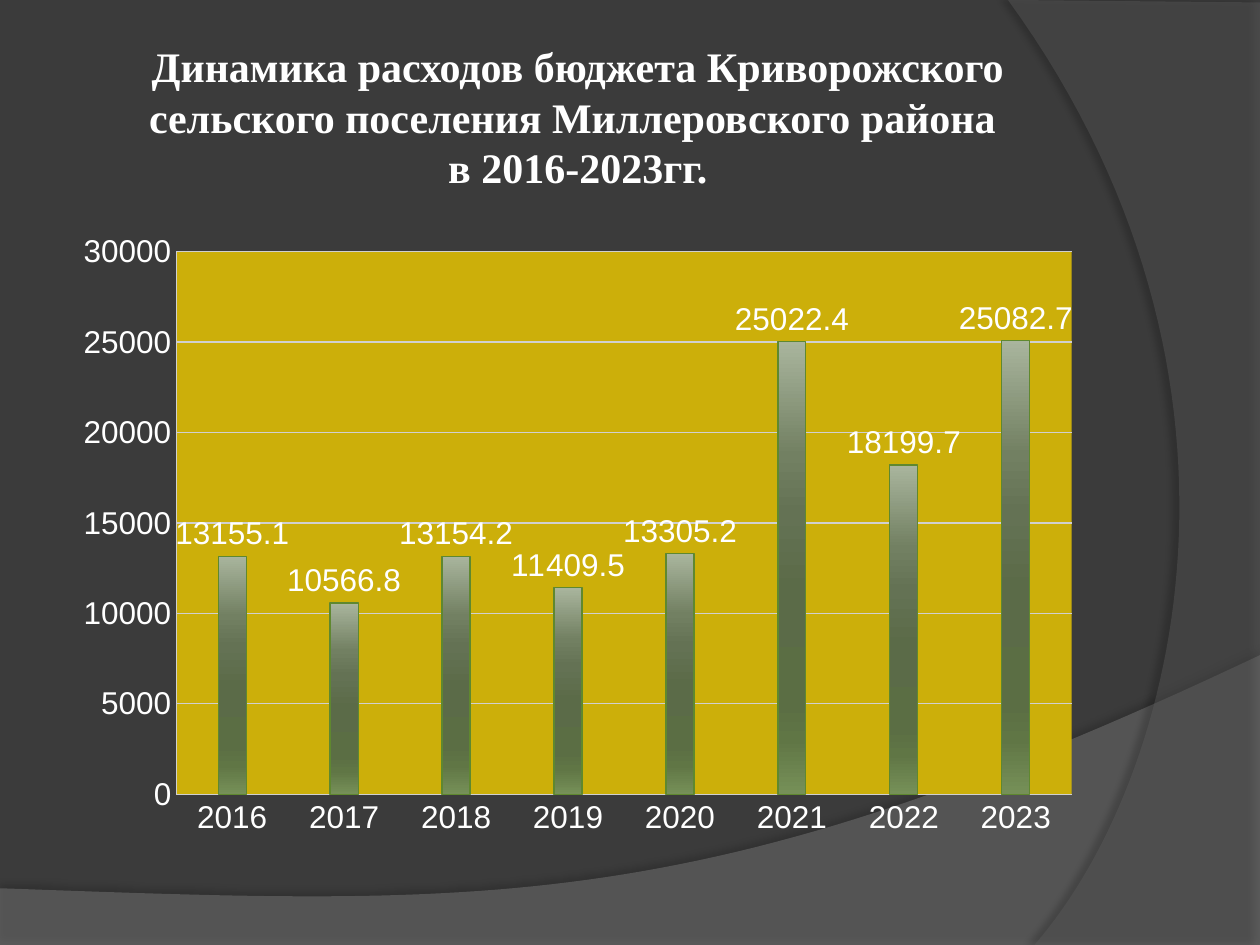
from lxml import etree
from pptx import Presentation
from pptx.chart.data import CategoryChartData
from pptx.dml.color import RGBColor
from pptx.enum.chart import XL_CHART_TYPE, XL_LABEL_POSITION, XL_TICK_MARK
from pptx.enum.text import MSO_ANCHOR, PP_ALIGN
from pptx.oxml import parse_xml
from pptx.oxml.ns import nsdecls, qn
from pptx.util import Inches, Pt

COLUMN = XL_CHART_TYPE.COLUMN_CLUSTERED
OUTSIDE_END = XL_LABEL_POSITION.OUTSIDE_END
NO_TICK = XL_TICK_MARK.NONE
MIDDLE = MSO_ANCHOR.MIDDLE
CENTER = PP_ALIGN.CENTER

COLORS = {"bg": "3B3B3B", "wave": "7F7F7F", "arc": "5E5E5E", "shadow": "000000",
          "text": "FFFFFF", "plot": "CCAF0A", "bar_line": "5F882F", "grid": "D0D0D0"}
BAR_STOPS = [(0, "A9B59D"), (25, "728062"), (38, "647254"), (55, "5B6B48"),
             (80, "5B6E44"), (88, "607645"), (100, "769058")]
TITLE = ("Динамика расходов бюджета Криворожского сельского поселения "
         "Миллеровского района \vв 2016-2023гг.")
EXPENSES = {"2016": 13155.1, "2017": 10566.8, "2018": 13154.2, "2019": 11409.5,
            "2020": 13305.2, "2021": 25022.4, "2022": 18199.7, "2023": 25082.7}


def rgb(name):
    return RGBColor.from_string(COLORS[name])


def set_attrs(obj, values):
    for name, value in values.items():
        setattr(obj, name, value)


def bezier(p0, p1, p2, p3, steps=60):
    """Points of a cubic curve, both ends included."""
    points = []
    for i in range(steps + 1):
        t = i / steps
        u = 1 - t
        points.append(tuple(u**3 * a + 3 * u * u * t * b + 3 * u * t * t * c + t**3 * d
                            for a, b, c, d in zip(p0, p1, p2, p3)))
    return points


def add_swoosh(s, points, color, alpha, shadow):
    """Translucent outline; shadow is (alpha %, blur pt, distance pt, degrees)."""
    start, *rest = [(Inches(x), Inches(y)) for x, y in points]
    builder = s.shapes.build_freeform(*start)
    builder.add_line_segments(rest, close=True)
    sp = builder.convert_to_shape()
    sp.fill.solid()
    sp.fill.fore_color.rgb = rgb(color)
    sp.line.fill.background()
    sp.shadow.inherit = False
    sp_pr = sp._element.spPr
    fill_color = sp_pr.find(qn("a:solidFill"))[0]
    etree.SubElement(fill_color, qn("a:alpha"), val=str(alpha * 1000))
    shadow_alpha, blur, dist, angle = shadow
    sp_pr.find(qn("a:effectLst")).append(parse_xml(
        f'<a:outerShdw {nsdecls("a")} blurRad="{Pt(blur)}" dist="{Pt(dist)}" '
        f'dir="{angle * 60000}" algn="ctr" rotWithShape="0">'
        f'<a:srgbClr val="{COLORS["shadow"]}"><a:alpha val="{shadow_alpha * 1000}"/>'
        '</a:srgbClr></a:outerShdw>'))


def add_title(s):
    title = s.shapes.title
    set_attrs(title, {"left": Inches(0.5), "top": Inches(0.3),
                      "width": Inches(8.17), "height": Inches(1.25)})
    tf = title.text_frame
    margins = dict.fromkeys(
        ("margin_left", "margin_top", "margin_right", "margin_bottom"), Inches(0.05))
    set_attrs(tf, {"vertical_anchor": MIDDLE, "word_wrap": True, **margins})
    tf.text = TITLE
    p = tf.paragraphs[0]
    p.alignment = CENTER
    for r in p.runs:
        set_attrs(r.font, {"name": "Times New Roman", "size": Pt(24), "bold": True})
        r.font.color.rgb = rgb("text")
    s.shapes._spTree.append(title._element)  # bring in front of the swooshes


def style_plot_area(chart):
    plot_area = chart._chartSpace.chart.plotArea
    for old in plot_area.findall(qn("c:layout")):
        plot_area.remove(old)
    box = {"x": 0.11, "y": 0.05, "w": 0.87, "h": 0.87}
    places = "".join(f'<c:{key} val="{value}"/>' for key, value in box.items())
    plot_area.insert(0, parse_xml(
        f'<c:layout {nsdecls("c")}><c:manualLayout><c:layoutTarget val="inner"/>'
        f'<c:xMode val="edge"/><c:yMode val="edge"/>{places}</c:manualLayout></c:layout>'))
    plot_area.append(parse_xml(
        f'<c:spPr {nsdecls("c", "a")}><a:solidFill><a:srgbClr val="{COLORS["plot"]}"/>'
        '</a:solidFill></c:spPr>'))


def style_bars(series):
    series.format.line.color.rgb = rgb("bar_line")
    series.format.line.width = Pt(0.75)
    stops = "".join(f'<a:gs pos="{pos * 1000}"><a:srgbClr val="{color}"/></a:gs>'
                    for pos, color in BAR_STOPS)
    series._element.find(qn("c:spPr")).insert(0, parse_xml(
        f'<a:gradFill {nsdecls("a")}><a:gsLst>{stops}</a:gsLst>'
        '<a:lin ang="5400000" scaled="0"/></a:gradFill>'))


def add_expense_chart(s):
    data = CategoryChartData()
    data.categories = list(EXPENSES)
    data.add_series("Series 1", list(EXPENSES.values()))
    chart = s.shapes.add_chart(COLUMN, Inches(0.5), Inches(1.75),
                               Inches(8.17), Inches(4.95), data).chart
    set_attrs(chart, {"has_legend": False, "has_title": False})
    set_attrs(chart.font, {"name": "Arial", "size": Pt(18)})
    chart.font.color.rgb = rgb("text")

    axes = chart.category_axis, chart.value_axis
    for axis in axes:
        set_attrs(axis, {"major_tick_mark": NO_TICK, "minor_tick_mark": NO_TICK})
        axis.format.line.color.rgb = rgb("grid")
    set_attrs(chart.value_axis, {"minimum_scale": 0, "maximum_scale": 30000,
                                 "major_unit": 5000, "has_major_gridlines": True})
    chart.value_axis.major_gridlines.format.line.color.rgb = rgb("grid")

    plot = chart.plots[0]
    set_attrs(plot, {"gap_width": 300, "vary_by_categories": False,
                     "has_data_labels": True})
    set_attrs(plot.data_labels, {"show_value": True, "position": OUTSIDE_END})
    style_bars(plot.series[0])
    style_plot_area(chart)


def main():
    prs = Presentation()
    prs.slide_width, prs.slide_height = Inches(10), Inches(7.5)
    s = prs.slides.add_slide(prs.slide_layouts[5])
    s.background.fill.solid()
    s.background.fill.fore_color.rgb = rgb("bg")

    wave = bezier((10, 5.2), (5.59, 7.29), (3.91, 7.19), (0, 7.05))
    add_swoosh(s, [(0, 7.5), (10, 7.5)] + wave, "wave", 45, (35, 4, 3.5, 270))
    arc = bezier((8.21, 7.5), (9.35, 6.19), (10.18, 3), (8, 0))
    add_swoosh(s, [(10, 0.02), (10, 7.5)] + arc, "arc", 40, (45, 4, 4, 180))
    add_title(s)
    add_expense_chart(s)
    prs.save("out.pptx")


if __name__ == "__main__":
    main()
